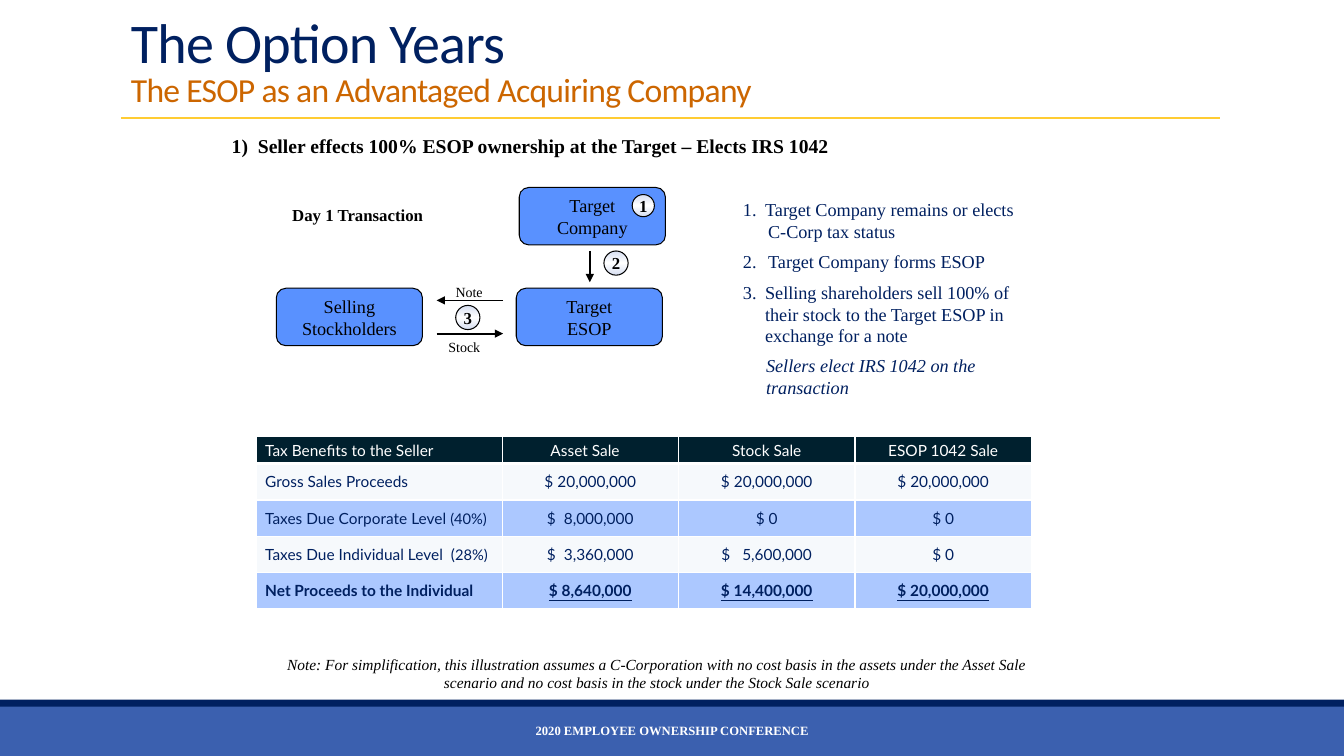
from copy import deepcopy
from dataclasses import dataclass

from lxml.etree import SubElement
from pptx import Presentation
from pptx.dml.color import RGBColor
from pptx.enum.shapes import MSO_CONNECTOR as Conn, MSO_SHAPE as Geo
from pptx.enum.text import MSO_ANCHOR as Anchor, PP_ALIGN as Align
from pptx.oxml import parse_xml
from pptx.oxml.ns import nsdecls, qn
from pptx.util import Emu, Pt

SERIF, SANS, TABLE_FONT = "Times New Roman", "Calibri", "Lato"
NAVY, BLACK, WHITE = "002060", "000000", "FFFFFF"
HEADER, PALE, BAND = "00202E", "F6F9FC", "ACC8FF"


@dataclass(frozen=True)
class Style:
    size: float
    color: str = BLACK
    font: str = SERIF
    bold: bool = False
    italic: bool = False
    underline: bool = False
    spacing: int = 0


@dataclass(frozen=True)
class Para:
    text: str
    style: Style
    align: Align = Align.LEFT
    left: int = 0
    number: int = 0
    before: float = 0


@dataclass(frozen=True)
class Box:
    x: int
    y: int
    w: int
    h: int


@dataclass(frozen=True)
class Arrow:
    x1: int
    y1: int
    x2: int
    y2: int


def px(n: int) -> Emu:
    return Emu(n * 9144)


def rgb(value: str) -> RGBColor:
    return RGBColor.from_string(value)


def add_run(p, text: str, style: Style) -> None:
    r = p.add_run()
    r.text = text
    f = r.font
    f.name, f.size, f.color.rgb = style.font, Pt(style.size), rgb(style.color)
    f.bold, f.italic, f.underline = style.bold, style.italic, style.underline
    if style.spacing:
        r._r.get_or_add_rPr().set("spc", str(style.spacing))


def write(tf, paras: list[Para]) -> None:
    for i, para in enumerate(paras):
        p = tf.add_paragraph() if i else tf.paragraphs[0]
        p.alignment = para.align
        if para.left:
            pPr = p._p.get_or_add_pPr()
            pPr.set("marL", str(px(para.left)))
            pPr.set("indent", str(px(-para.left if para.number else 0)))
            if para.number:
                SubElement(pPr, qn("a:buAutoNum"), type="arabicPeriod", startAt=str(para.number))
        if para.before:
            p.space_before = Pt(para.before)
        add_run(p, para.text, para.style)


def add_text(s, box: Box, paras: list[Para]):
    tf = s.shapes.add_textbox(px(box.x), px(box.y), px(box.w), px(box.h)).text_frame
    tf.word_wrap = True
    write(tf, paras)
    return tf


def add_block(s, geo: Geo, box: Box, fill: str, outlined: bool, paras: list[Para]):
    sp = s.shapes.add_shape(geo, px(box.x), px(box.y), px(box.w), px(box.h))
    sp.shadow.inherit = False
    sp.fill.solid()
    sp.fill.fore_color.rgb = rgb(fill)
    if outlined:
        sp.line.color.rgb, sp.line.width = rgb(BLACK), Pt(0.75)
    else:
        sp.line.fill.background()
    tf = sp.text_frame
    tf.margin_left = tf.margin_right = tf.margin_top = tf.margin_bottom = 0
    tf.vertical_anchor = Anchor.MIDDLE
    write(tf, paras)
    return sp


def add_badge(s, box: Box, number: str) -> None:
    sp = add_block(s, Geo.OVAL, box, WHITE, True, [Para(number, Style(12, bold=True), Align.CENTER)])
    sp.text_frame.word_wrap = False
    sp.fill.gradient()
    sp.fill.gradient_angle = 90
    edge, middle = sp.fill.gradient_stops
    edge.color.rgb, edge.position = rgb("D6DEF1"), 0
    middle.color.rgb, middle.position = rgb(WHITE), 0.5
    stops = sp._element.spPr.find(".//" + qn("a:gsLst"))
    last = deepcopy(stops[0])
    last.set("pos", "100000")
    stops.append(last)


def add_line(s, ends: Arrow, color: str, width: float, arrowhead: bool) -> None:
    c = s.shapes.add_connector(Conn.STRAIGHT, px(ends.x1), px(ends.y1), px(ends.x2), px(ends.y2))
    c.line.color.rgb, c.line.width = rgb(color), Pt(width)
    if arrowhead:
        SubElement(c.line._get_or_add_ln(), qn("a:tailEnd"), type="triangle")
    SubElement(c._element.spPr, qn("a:effectLst"))


def style_cell(cell, fill: str, bottom: int) -> None:
    cell.margin_left = cell.margin_right = px(9)
    cell.margin_top = cell.margin_bottom = px(4)
    cell.vertical_anchor = Anchor.MIDDLE
    cell.fill.solid()
    cell.fill.fore_color.rgb = rgb(fill)
    tcPr = cell._tc.get_or_add_tcPr()
    for i, (side, width) in enumerate([("L", 1), ("R", 1), ("T", 1), ("B", bottom)]):
        tcPr.insert(i, parse_xml(
            f'<a:ln{side} {nsdecls("a")} w="{Pt(width)}"><a:solidFill>'
            f'<a:srgbClr val="{WHITE}"/></a:solidFill></a:ln{side}>'))


def add_benefits(s) -> None:
    rows = [
        (["Tax Benefits to the Seller", "Asset Sale", "Stock Sale", "ESOP 1042 Sale"], ""),
        (["Gross Sales Proceeds", "$ 20,000,000", "$ 20,000,000", "$ 20,000,000"], ""),
        (["Taxes Due Corporate Level ", "$  8,000,000", "$ 0", "$ 0"], "(40%)"),
        (["Taxes Due Individual Level  (", "$  3,360,000", "$   5,600,000", "$ 0"], "28%)"),
        (["Net Proceeds to the Individual", "$ 8,640,000", "$ 14,400,000", "$ 20,000,000"], ""),
    ]
    widths, heights = [244] + [175] * 3, [27] + [36] * 4
    table = s.shapes.add_table(len(rows), len(widths), px(254), px(433),
                               px(sum(widths)), px(sum(heights))).table
    table.horz_banding = False
    for col, width in zip(table.columns, widths):
        col.width = px(width)
    for i, (texts, rate) in enumerate(rows):
        table.rows[i].height = px(heights[i])
        color = NAVY if i else WHITE
        fill = (PALE if i % 2 else BAND) if i else HEADER
        total = i == len(rows) - 1
        for j, text in enumerate(texts):
            cell = table.cell(i, j)
            style_cell(cell, fill, 1 if i else 3)
            style = Style(11, color, TABLE_FONT, bold=total, underline=total and j > 0)
            inset = 39 if (i, j) == (0, 1) else 0
            align = Align.CENTER if j and not inset else Align.LEFT
            write(cell.text_frame, [Para(text, style, align, left=inset)])
            if rate and j == 0:
                add_run(cell.text_frame.paragraphs[0], rate, Style(10.5, color, TABLE_FONT))


def main() -> None:
    prs = Presentation()
    prs.slide_width, prs.slide_height = px(1333), px(750)
    s = prs.slides.add_slide(prs.slide_layouts[6])

    add_block(s, Geo.RECTANGLE, Box(0, 700, 1333, 50), "3B60AF", False,
              [Para("2020 EMPLOYEE OWNERSHIP CONFERENCE", Style(9, WHITE, bold=True), Align.CENTER)])
    add_block(s, Geo.RECTANGLE, Box(0, 694, 1333, 7), NAVY, False, [])
    add_line(s, Arrow(120, 117, 1210, 117), "FFCC33", 1, False)

    tf = add_text(s, Box(120, 9, 1100, 104),
                  [Para("The Option Years", Style(40, NAVY, SANS, spacing=-50))])
    tf.vertical_anchor = Anchor.BOTTOM
    p = tf.paragraphs[0]
    p.line_spacing = 0.85
    p.add_line_break()
    add_run(p, "The ESOP as an Advantaged Acquiring Company", Style(24, "CC6600", SANS, spacing=-50))

    add_text(s, Box(220, 128, 808, 34),
             [Para("1)  Seller effects 100% ESOP ownership at the Target – Elects IRS 1042", Style(14, bold=True))])
    add_text(s, Box(280, 198, 169, 30), [Para("Day 1 Transaction", Style(12, bold=True))])

    for x, y, lines in [(515, 186, ("Target", "Company")), (512, 286, ("Target", "ESOP")),
                        (274, 286, ("Selling", "Stockholders"))]:
        add_block(s, Geo.ROUNDED_RECTANGLE, Box(x, y, 145, 57), "5991FF", True,
                  [Para(line, Style(13), Align.CENTER) for line in lines])
    for ends in [Arrow(585, 249, 585, 280), Arrow(499, 298, 433, 298), Arrow(433, 331, 499, 331)]:
        add_line(s, ends, BLACK, 1.25, True)
    for x, y, size, number in [(627, 193, 22, "1"), (599, 249, 24, "2"), (452, 303, 24, "3")]:
        add_badge(s, Box(x, y, size, size), number)
    for x, y, label in [(442, 276, "Note"), (435, 331, "Stock")]:
        add_text(s, Box(x, y, 66, 27), [Para(label, Style(10))])

    step = Style(13, NAVY)
    add_text(s, Box(727, 192, 318, 209), [
        Para("Target Company remains or elects", step, left=22, number=1),
        Para("C-Corp tax status", step, left=25),
        Para("Target Company forms ESOP", step, left=25, number=2, before=6),
        Para("Selling shareholders sell 100% of their stock to the Target ESOP in exchange for a note",
             step, left=22, number=3, before=6),
        Para("Sellers elect IRS 1042 on the transaction", Style(13, NAVY, italic=True), left=23, before=5.3),
    ])
    add_benefits(s)
    add_text(s, Box(274, 645, 755, 47), [
        Para("Note: For simplification, this illustration assumes a C-Corporation with no cost basis in the assets "
             "under the Asset Sale scenario and no cost basis in the stock under the Stock Sale scenario",
             Style(11, italic=True), Align.CENTER)])
    prs.save("out.pptx")


if __name__ == "__main__":
    main()
